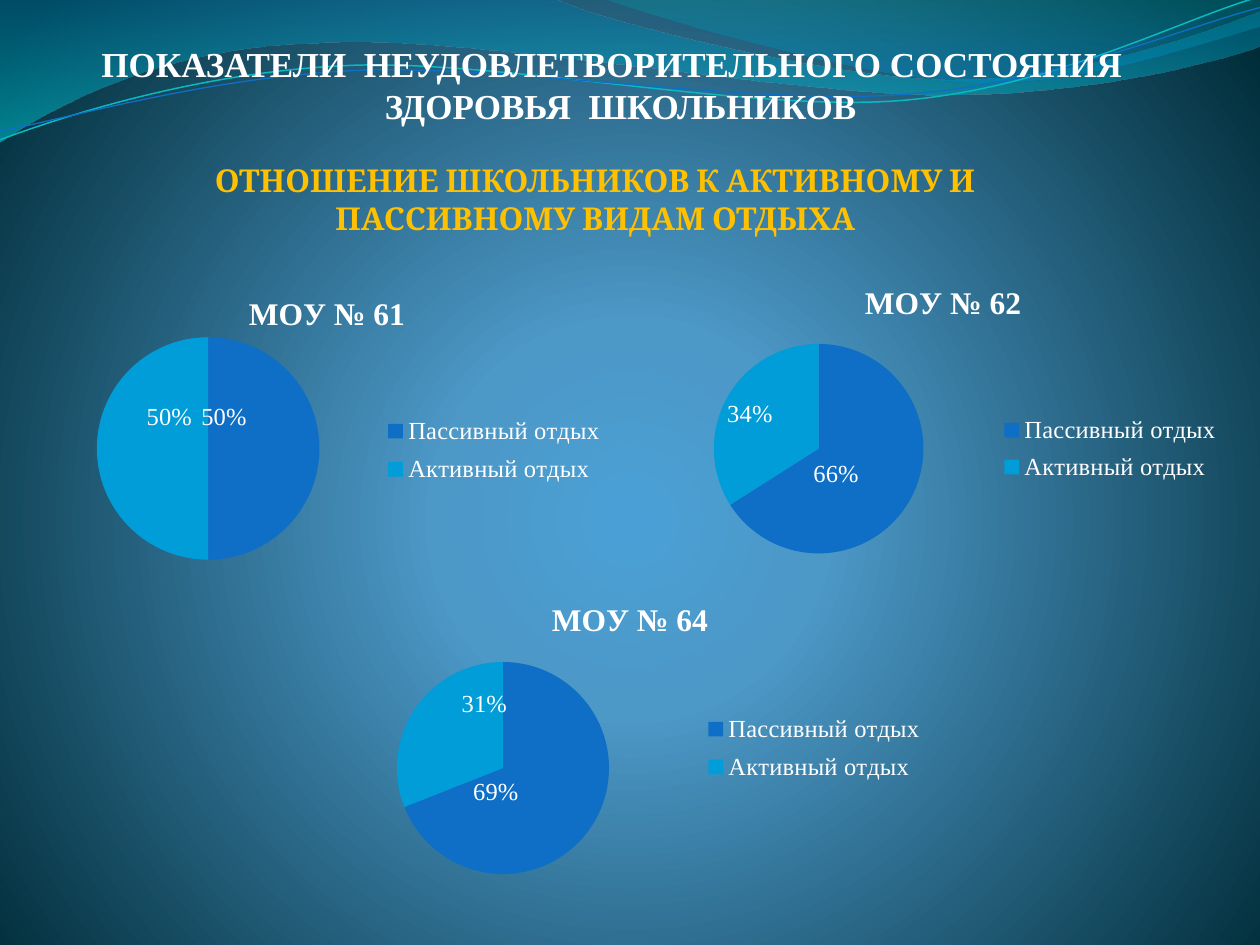
from lxml.etree import SubElement
from pptx import Presentation
from pptx.chart.data import CategoryChartData
from pptx.dml.color import RGBColor
from pptx.enum.chart import XL_CHART_TYPE, XL_LABEL_POSITION, XL_LEGEND_POSITION
from pptx.enum.text import PP_ALIGN
from pptx.oxml import parse_xml
from pptx.oxml.ns import nsdecls, qn
from pptx.util import Inches, Pt

COLORS = {
    "white": "FFFFFF", "gold": "FFC000", "passive": "0F6FC6", "active": "009DD9",
    "glow": "4AA0D6", "mid": "4C98C7", "edge": "002C38", "teal_line": "0AB8BF",
    "wave_top": "0074A1", "wave_bottom": "00C6CF", "fold_top": "00A1A9", "fold_bottom": "008BBF",
}
SERIF = "Times New Roman"
CATEGORIES = ["Пассивный отдых", "Активный отдых"]
LABEL_FORMAT = {"size": Pt(14), "name": SERIF, "bold": False}
TITLE_FORMAT = {"size": Pt(18), "name": SERIF, "bold": True}

WAVE = [(0, 0), (4.4, -0.01), (4.76, 0.17, 6.64, 0.63, 7.58, 0.63),
        (8.53, 0.63, 9.58, 0.26, 10, 0.09), (10.01, 0.36),
        (9.83, 0.44, 8.7, 0.76, 7.46, 0.75), (6.22, 0.75, 3.82, 0.28, 2.57, 0.34),
        (1.29, 0.36, 0.46, 0.83, -0.01, 1.13)]
FOLD = [(4.79, -0.01), (5.09, 0.11, 6.82, 0.62, 7.69, 0.65),
        (8.56, 0.69, 9.61, 0.32, 10, 0.21), (10, 0)]
TEAL_LINE = [(0, 1.11), (0.48, 0.93, 1.58, 0.57, 2.77, 0.52),
             (3.95, 0.47, 5.93, 0.89, 7.13, 0.8), (8.33, 0.71, 9.38, 0.15, 9.98, -0.02)]
BLUE_LINE = [(0, 1.04), (0.47, 0.96, 1.64, 0.61, 2.83, 0.56),
             (4.03, 0.51, 5.97, 0.84, 7.17, 0.75), (8.36, 0.67, 9.41, 0.21, 10, 0.06)]


def rgb(name):
    return RGBColor.from_string(COLORS[name])


def apply_font(font, values, color="white"):
    for attribute, value in values.items():
        setattr(font, attribute, value)
    font.color.rgb = rgb(color)


def apply_gradient(fill, parent, stops, direction):
    fill.solid()
    stop_xml = "".join(
        f'<a:gs pos="{position * 1000}"><a:srgbClr val="{COLORS[color]}">'
        f'<a:alpha val="{opacity * 1000}"/></a:srgbClr></a:gs>'
        for position, color, opacity in stops)
    gradient = parse_xml(f'<a:gradFill {nsdecls("a")} rotWithShape="1">'
                         f'<a:gsLst>{stop_xml}</a:gsLst>{direction}</a:gradFill>')
    parent.replace(parent.find(qn("a:solidFill")), gradient)


def add_curve(slide, box, segments, closed):
    left, top = box[:2]
    points = [[(Inches(left + x), Inches(top + y)) for x, y in zip(segment[::2], segment[1::2])]
              for segment in segments]
    builder = slide.shapes.build_freeform(*points[0][0])
    builder.add_line_segments([segment[-1] for segment in points[1:]], close=closed)
    curve = builder.convert_to_shape()
    curve.shadow.inherit = False
    straight_parts = list(curve.element.iter(qn("a:lnTo")))
    for straight, segment in zip(straight_parts, points[1:]):
        if len(segment) == 3:
            bend = straight.makeelement(qn("a:cubicBezTo"))
            for x, y in segment:
                control = SubElement(bend, qn("a:pt"))
                control.set("x", str(x - curve.left))
                control.set("y", str(y - curve.top))
            straight.getparent().replace(straight, bend)
    return curve


def add_backdrop(slide, box):
    background_fill = slide.background.fill
    background_fill.solid()
    apply_gradient(background_fill, slide.element.find(".//" + qn("p:bgPr")),
                   [(0, "glow", 100), (25, "mid", 100), (100, "edge", 100)],
                   '<a:path path="circle"><a:fillToRect l="10000" t="110000" '
                   'r="10000" b="100000"/></a:path>')
    for segments, stops in (
            (WAVE, [(0, "wave_top", 45), (100, "wave_bottom", 55)]),
            (FOLD, [(0, "fold_top", 30), (80, "fold_bottom", 45)])):
        band = add_curve(slide, box, segments, True)
        apply_gradient(band.fill, band.element.spPr, stops, '<a:lin ang="5400000" scaled="1"/>')
        band.line.fill.background()
    for segments, color, width in ((TEAL_LINE, "teal_line", 0.85), (BLUE_LINE, "passive", 0.75)):
        strand = add_curve(slide, box, segments, False)
        strand.fill.background()
        strand.line.color.rgb = rgb(color)
        strand.line.width = Pt(width)


def add_heading(slide, box, text, font_values, color, margins):
    frame = slide.shapes.add_textbox(*map(Inches, box)).text_frame
    frame.word_wrap = True
    for side, margin in margins.items():
        setattr(frame, f"margin_{side}", Inches(margin))
    paragraph = frame.paragraphs[0]
    paragraph.alignment = PP_ALIGN.CENTER
    run = paragraph.add_run()
    run.text = text
    apply_font(run.font, font_values, color)


def add_layout(parent, index, values):
    layout = parent.find(qn("c:layout"))
    if layout is None:
        layout = parent.makeelement(qn("c:layout"))
        parent.insert(index, layout)
    manual = SubElement(layout, qn("c:manualLayout"))
    for tag, value in values.items():
        SubElement(manual, qn(f"c:{tag}")).set("val", str(value))


def add_rest_chart(slide, box, school, shares, plot, legend_box, label_shifts):
    chart_data = CategoryChartData()
    chart_data.categories = CATEGORIES
    chart_data.add_series("Series 1", shares)
    chart = slide.shapes.add_chart(
        XL_CHART_TYPE.PIE, *map(Inches, box), chart_data).chart
    apply_font(chart.font, {"size": Pt(10), "name": "Cambria"})

    chart.has_title = True
    title_run = chart.chart_title.text_frame.paragraphs[0].add_run()
    title_run.text = school
    apply_font(title_run.font, TITLE_FORMAT)
    chart.chart_title.include_in_layout = False

    chart.has_legend = True
    chart.legend.position = XL_LEGEND_POSITION.RIGHT
    chart.legend.include_in_layout = False
    apply_font(chart.legend.font, LABEL_FORMAT)

    pie = chart.plots[0]
    pie.vary_by_categories = True
    series = pie.series[0]
    labels = series.data_labels
    label_values = {"show_percentage": True, "show_value": False, "number_format": "0%",
                    "number_format_is_linked": False, "position": XL_LABEL_POSITION.CENTER}
    for attribute, value in label_values.items():
        setattr(labels, attribute, value)
    apply_font(labels.font, LABEL_FORMAT)

    for index, (color, shift) in enumerate(zip(("passive", "active"), label_shifts)):
        point = series.points[index]
        point.format.fill.solid()
        point.format.fill.fore_color.rgb = rgb(color)
        point.format.line.fill.background()
        label = point.data_label
        label.position = XL_LABEL_POSITION.CENTER
        apply_font(label.font, LABEL_FORMAT)
        label_xml = series.data_labels._element.findall(qn("c:dLbl"))[index]
        for flag in ("showVal", "showPercent"):
            label_xml.find(qn(f"c:{flag}")).set("val", str(int(flag == "showPercent")))
        add_layout(label_xml, 1, dict(zip("xy", shift)))

    edges = {"xMode": "edge", "yMode": "edge"}
    add_layout(chart.element.find(".//" + qn("c:plotArea")), 0,
               {"layoutTarget": "inner", **edges, **dict(zip("xywh", plot))})
    add_layout(chart.element.find(".//" + qn("c:legend")), 1,
               {**edges, **dict(zip("xywh", legend_box))})


def main():
    presentation = Presentation()
    presentation.slide_width, presentation.slide_height = Inches(10), Inches(7.5)
    slide = presentation.slides.add_slide(presentation.slide_layouts[6])
    add_backdrop(slide, (0, 0, 10, 1.14))
    add_heading(slide, (0.64, 0.29, 8.59, 0.87),
                "ПОКАЗАТЕЛИ  НЕУДОВЛЕТВОРИТЕЛЬНОГО СОСТОЯНИЯ   ЗДОРОВЬЯ  ШКОЛЬНИКОВ",
                {"size": Pt(20), "name": SERIF, "bold": True}, "white",
                {"left": 0, "right": 0.02})
    add_heading(slide, (0.75, 1.23, 7.95, 0.71),
                "ОТНОШЕНИЕ ШКОЛЬНИКОВ К АКТИВНОМУ И ПАССИВНОМУ ВИДАМ ОТДЫХА",
                {"size": Pt(18), "name": "Cambria", "bold": True}, "gold", {})
    for school in (
            ((0.35, 2.18, 4.49, 2.76), "МОУ № 61", (50, 50), (0, 0.18, 0.58, 0.64),
             (0.6, 0.38, 0.4, 0.25), ((-0.07, -0.09), (0.03, -0.09))),
            ((5.24, 2.1, 4.49, 2.52), "МОУ № 62", (66, 34), (0, 0.25, 0.56, 0.66),
             (0.6, 0.45, 0.4, 0.26), ((-0.05, 0), (-0.04, -0.03))),
            ((2.48, 4.62, 5.04, 2.44), "МОУ № 64", (69, 31), (0, 0.26, 0.6, 0.69),
             (0.61, 0.4, 0.36, 0.28), ((-0.08, -0.02), (0.04, -0.11)))):
        add_rest_chart(slide, *school)
    presentation.save("out.pptx")


if __name__ == "__main__":
    main()
